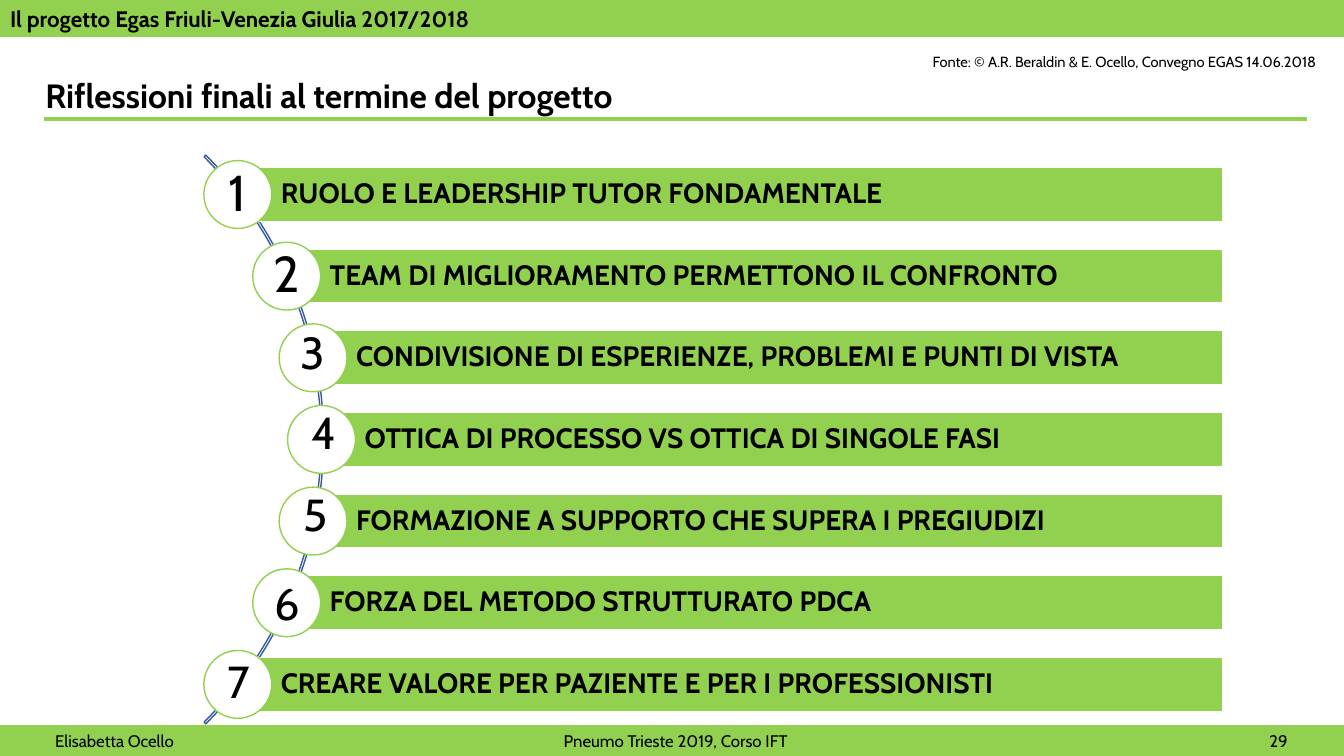
from math import sqrt

from lxml.etree import SubElement
from pptx import Presentation
from pptx.dml.color import RGBColor
from pptx.enum.shapes import MSO_CONNECTOR as CONNECTOR, MSO_SHAPE as SHAPE
from pptx.enum.text import MSO_ANCHOR as ANCHOR, PP_ALIGN as ALIGN
from pptx.oxml.ns import qn
from pptx.util import Inches, Pt

GREEN = RGBColor(0x92, 0xD0, 0x50)
BLUE = RGBColor(0x36, 0x5B, 0x9D)
WHITE = RGBColor(0xFF, 0xFF, 0xFF)
BLACK = RGBColor(0, 0, 0)
FONT = "Cabin"

presentation = Presentation()
presentation.slide_width = Inches(13.333)
presentation.slide_height = Inches(7.5)
slide = presentation.slides.add_slide(presentation.slide_layouts[6])

COLUMNS, ROWS = 40, 22.5
CELL = presentation.slide_width / COLUMNS


def add_shape(kind, left, top, width, height, fill=None, line=WHITE, weight=1):
    box = [round(value * CELL) for value in (left, top, width, height)]
    shape = slide.shapes.add_shape(kind, *box)
    shape.shadow.inherit = False
    if fill is None:
        shape.fill.background()
    else:
        shape.fill.solid()
        shape.fill.fore_color.rgb = fill
    shape.line.color.rgb = line
    shape.line.width = Pt(weight)
    return shape


def add_text(text, left, top, width, height, size=20, bold=False, align=ALIGN.LEFT,
             anchor=ANCHOR.MIDDLE, inset=0.3, spacing=1.0, tabs=(), shaped=False, **style):
    if shaped:
        shape = add_shape(SHAPE.RECTANGLE, left, top, width, height, **style)
    else:
        box = [round(value * CELL) for value in (left, top, width, height)]
        shape = slide.shapes.add_textbox(*box)
    frame = shape.text_frame
    frame.word_wrap = True
    frame.vertical_anchor = anchor
    frame.margin_left = round(inset * CELL)
    paragraph = frame.paragraphs[0]
    paragraph.text = text
    paragraph.alignment = align
    paragraph.line_spacing = spacing
    if tabs:
        tab_list = SubElement(paragraph._p.get_or_add_pPr(), qn("a:tabLst"))
        for stop in tabs:
            SubElement(tab_list, qn("a:tab"), pos=str(round((stop - inset) * CELL)), algn="l")
    font = paragraph.runs[0].font
    font.name, font.size, font.bold = FONT, Pt(size), bold
    font.color.rgb = BLACK


ARC_X, ARC_Y, ARC_RADIUS = -2.34, 13.08, 11.97
arc = add_shape(SHAPE.BLOCK_ARC, ARC_X - ARC_RADIUS, ARC_Y - ARC_RADIUS,
                2 * ARC_RADIUS, 2 * ARC_RADIUS, line=BLUE)
for index, value in enumerate((189, 27, 0.003)):
    arc.adjustments[index] = value

BAR_RIGHT, BAR_HEIGHT, BAR_PITCH = 36.4, 1.61, 2.43
CIRCLE, CIRCLE_TRACK = 2.02, 11.91
DIGIT_WIDTH = 1.65

reflections = [
    ("RUOLO E LEADERSHIP TUTOR FONDAMENTALE", 36, 0, -0.1),
    ("TEAM DI MIGLIORAMENTO PERMETTONO IL CONFRONTO", 36, 0, -0.1),
    ("CONDIVISIONE DI ESPERIENZE, PROBLEMI E PUNTI DI VISTA", 32, 0, -0.18),
    ("OTTICA DI PROCESSO VS OTTICA DI SINGOLE FASI", 32, 0.06, -0.24),
    ("FORMAZIONE A SUPPORTO CHE SUPERA I PREGIUDIZI", 32, 0.06, -0.21),
    ("FORZA DEL METODO STRUTTURATO PDCA", 32, 0, 0),
    ("CREARE VALORE PER PAZIENTE E PER I PROFESSIONISTI", 32, 0.03, -0.12),
]
for index, (text, digit_size, shift_x, shift_y) in enumerate(reflections):
    offset = (index - len(reflections) // 2) * BAR_PITCH
    x = ARC_X + sqrt(CIRCLE_TRACK ** 2 - offset ** 2)
    y = ARC_Y + offset
    add_text(text, x, y - BAR_HEIGHT / 2, BAR_RIGHT - x, BAR_HEIGHT, bold=True,
             inset=1.28, spacing=0.9, shaped=True, fill=GREEN)
    add_shape(SHAPE.OVAL, x - CIRCLE / 2, y - CIRCLE / 2, CIRCLE, CIRCLE,
              fill=WHITE, line=GREEN)
    digit_height = digit_size * 0.06
    add_text(str(index + 1), x + shift_x - DIGIT_WIDTH / 2, y + shift_y - digit_height / 2,
             DIGIT_WIDTH, digit_height, size=digit_size, align=ALIGN.CENTER)

add_text("Elisabetta Ocello\tPneumo Trieste 2019, Corso IFT\t29", 0, 21.58, COLUMNS,
         ROWS - 21.58, size=12, inset=1.64, tabs=(16.78, 37.78), shaped=True,
         fill=GREEN, line=GREEN, weight=0.75)
add_text("Fonte: © A.R. Beraldin & E. Ocello, Convegno EGAS 14.06.2018", 26.67, 1.41,
         12.81, 0.84, size=10.5, align=ALIGN.RIGHT, shaped=True, weight=0.75)
add_text("Riflessioni finali al termine del progetto", 1.05, 2.07, 37.86, 1.5,
         size=24, bold=True, anchor=ANCHOR.TOP)
add_text("Il progetto Egas Friuli-Venezia Giulia 2017/2018", 0, 0, COLUMNS, 1.1,
         size=16, bold=True, shaped=True, fill=GREEN, line=GREEN, weight=0.75)

rule_ends = [round(value * CELL) for value in (1.32, 3.54, 38.91, 3.54)]
title_rule = slide.shapes.add_connector(CONNECTOR.STRAIGHT, *rule_ends)
title_rule.line.color.rgb = GREEN
title_rule.line.width = Pt(2.25)
SubElement(title_rule._element.spPr, qn("a:effectLst"))

presentation.save("out.pptx")
